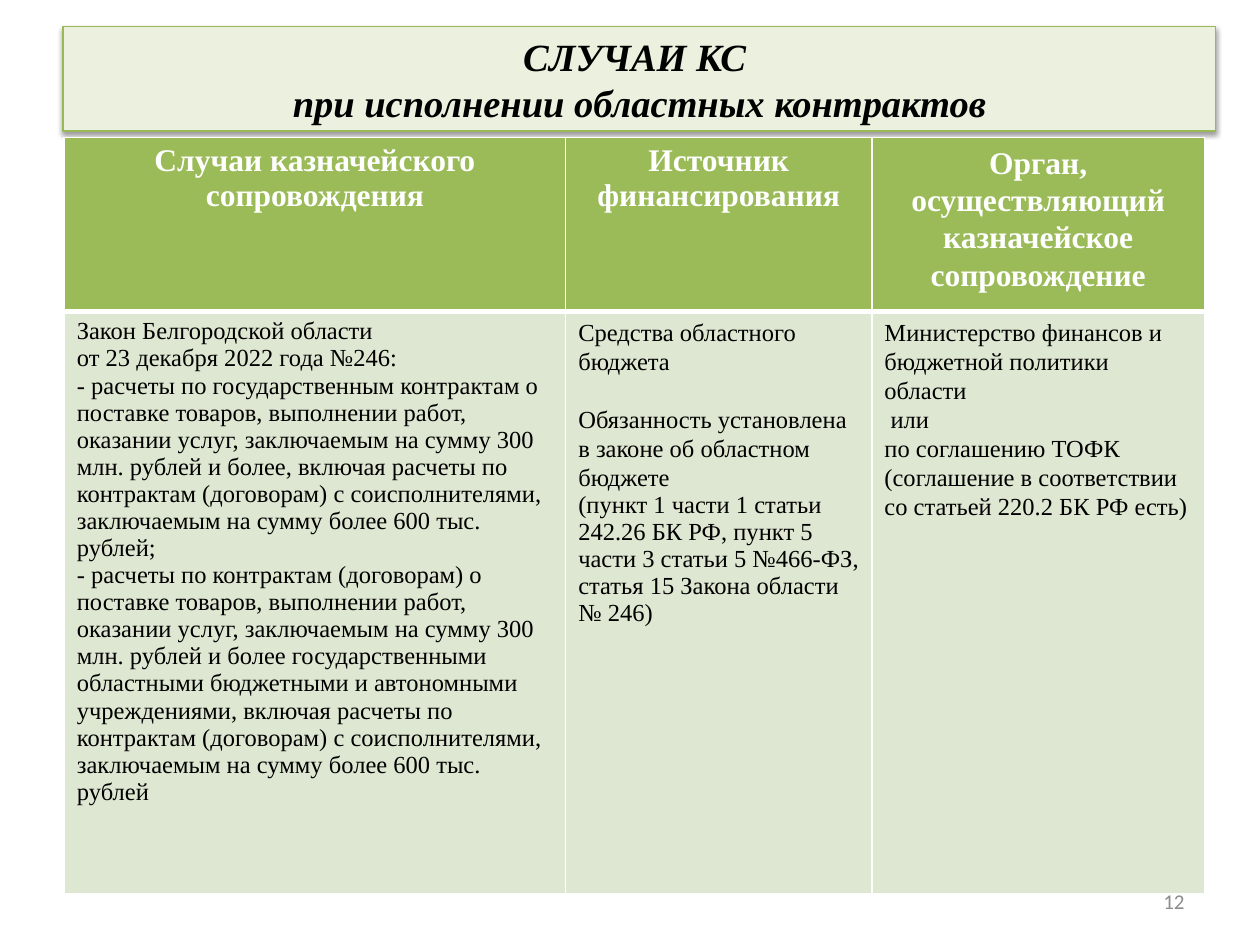
from lxml import etree
from pptx import Presentation
from pptx.dml.color import RGBColor
from pptx.enum.text import MSO_ANCHOR, MSO_AUTO_SIZE, PP_ALIGN
from pptx.oxml.ns import qn
from pptx.util import Inches, Pt

CENTER, LEFT, RIGHT, JUSTIFY = PP_ALIGN.CENTER, PP_ALIGN.LEFT, PP_ALIGN.RIGHT, PP_ALIGN.JUSTIFY
MIDDLE = MSO_ANCHOR.MIDDLE
NO_AUTOFIT = MSO_AUTO_SIZE.NONE
TITLE_LAYOUT = 5

TITLE = "СЛУЧАИ КС \vпри исполнении областных контрактов"
PAGE_NUMBER = "12"
JUSTIFIED = {"alignment": JUSTIFY}
PLAIN = {"alignment": LEFT}
LOOSE = {"alignment": LEFT, "line_spacing": 1.07}
SEPARATED = {**LOOSE, "space_before": Pt(16.5)}
HEADING = {"alignment": CENTER}
LOOSE_HEADING = {"alignment": CENTER, "line_spacing": 1.07, "space_after": Pt(8)}

HEADER_ROW = [
    [("Случаи казначейского сопровождения", HEADING)],
    [("Источник финансирования", HEADING)],
    [("Орган, осуществляющий казначейское сопровождение", LOOSE_HEADING)],
]
BODY_ROW = [
    [
        ("Закон Белгородской области ", JUSTIFIED),
        ("от 23 декабря 2022 года №246:", JUSTIFIED),
        ("- расчеты по государственным контрактам о поставке товаров, выполнении работ, "
         "оказании услуг, заключаемым на сумму 300 млн. рублей и более, включая расчеты по "
         "контрактам (договорам) с соисполнителями, заключаемым на сумму более 600 тыс. рублей;", PLAIN),
        ("- расчеты по контрактам (договорам) о поставке товаров, выполнении работ, оказании "
         "услуг, заключаемым на сумму 300 млн. рублей и более государственными областными "
         "бюджетными и автономными учреждениями, включая расчеты по контрактам (договорам) с "
         "соисполнителями, заключаемым на сумму более 600 тыс. рублей", PLAIN),
    ],
    [
        ("Средства областного бюджета", LOOSE),
        ("Обязанность установлена в законе об областном бюджете", SEPARATED),
        ("(пункт 1 части 1 статьи 242.26 БК РФ, пункт 5 части 3 статьи 5 №466-ФЗ, "
         "статья 15 Закона области", PLAIN),
        ("№ 246)", PLAIN),
    ],
    [
        ("Министерство финансов и бюджетной политики области", LOOSE),
        (" или", LOOSE),
        ("по соглашению ТОФК", LOOSE),
        ("(соглашение в соответствии со статьей 220.2 БК РФ есть)", LOOSE),
    ],
]
COLUMN_WIDTHS = [3.98, 2.43, 2.64]
ROWS = [
    {"cells": HEADER_ROW, "height": 1.34, "fill": "9BBB59", "bottom": 3,
     "font": {"name": "Times New Roman", "size": Pt(18), "bold": True}, "color": "FFFFFF"},
    {"cells": BODY_ROW, "height": 4.62, "fill": "DEE7D1", "bottom": 1,
     "font": {"name": "Times New Roman", "size": Pt(14), "bold": False}, "color": "000000"},
]


def rgb(value):
    return RGBColor.from_string(value)


def assign(target, values):
    for name, value in values.items():
        setattr(target, name, value)


def box(left, top, width, height):
    return dict(zip(("left", "top", "width", "height"), map(Inches, (left, top, width, height))))


def write(frame, paragraphs, font, color):
    for index, (text, layout) in enumerate(paragraphs):
        paragraph = frame.add_paragraph() if index else frame.paragraphs[0]
        paragraph.text = text
        assign(paragraph, layout)
        for run in paragraph.runs:
            assign(run.font, font)
            run.font.color.rgb = rgb(color)


def add_color(parent, value):
    return etree.SubElement(parent, qn("a:srgbClr"), val=value)


def add_shadow(shape):
    effects = etree.SubElement(shape.element.spPr, qn("a:effectLst"))
    shadow = etree.SubElement(effects, qn("a:outerShdw"), blurRad=str(Pt(3.1)),
                              dist=str(Pt(1.6)), dir="5400000", rotWithShape="0")
    etree.SubElement(add_color(shadow, "000000"), qn("a:alpha"), val="38000")


def set_borders(cell, widths):
    properties = cell._tc.get_or_add_tcPr()
    for side, width in widths.items():
        line = etree.SubElement(properties, qn(f"a:ln{side}"), w=str(Pt(width)))
        add_color(etree.SubElement(line, qn("a:solidFill")), "FFFFFF")


def add_title(slide):
    title = slide.shapes.title
    assign(title, box(0.5, 0.21, 9.15, 0.83))
    title.fill.solid()
    title.fill.fore_color.rgb = rgb("EBF1DE")
    title.line.color.rgb = rgb("98B955")
    title.line.width = Pt(0.75)
    add_shadow(title)
    assign(title.text_frame, {"auto_size": NO_AUTOFIT, "vertical_anchor": MIDDLE, "word_wrap": True})
    write(title.text_frame, [(TITLE, HEADING)],
          {"name": "Times New Roman", "size": Pt(22), "bold": True, "italic": True}, "000000")


def add_cases_table(slide):
    area = box(0.51, 1.09, sum(COLUMN_WIDTHS), sum(row["height"] for row in ROWS))
    table = slide.shapes.add_table(len(ROWS), len(COLUMN_WIDTHS), **area).table
    for column, width in zip(table.columns, COLUMN_WIDTHS):
        column.width = Inches(width)
    for row_index, row in enumerate(ROWS):
        table.rows[row_index].height = Inches(row["height"])
        top = ROWS[row_index - 1]["bottom"] if row_index else 1
        for column_index, paragraphs in enumerate(row["cells"]):
            cell = table.cell(row_index, column_index)
            set_borders(cell, {"L": 1, "R": 1, "T": top, "B": row["bottom"]})
            cell.fill.solid()
            cell.fill.fore_color.rgb = rgb(row["fill"])
            write(cell.text_frame, paragraphs, row["font"], row["color"])


def add_page_number(slide):
    frame = slide.shapes.add_textbox(**box(7.17, 6.95, 2.33, 0.4)).text_frame
    assign(frame, {"word_wrap": True, "vertical_anchor": MIDDLE})
    write(frame, [(PAGE_NUMBER, {"alignment": RIGHT})], {"name": "Calibri", "size": Pt(12)}, "8C8C8C")


def main():
    presentation = Presentation()
    assign(presentation, {"slide_width": Inches(10), "slide_height": Inches(7.5)})
    slide = presentation.slides.add_slide(presentation.slide_layouts[TITLE_LAYOUT])
    add_title(slide)
    add_page_number(slide)
    add_cases_table(slide)
    presentation.save("out.pptx")


if __name__ == "__main__":
    main()
